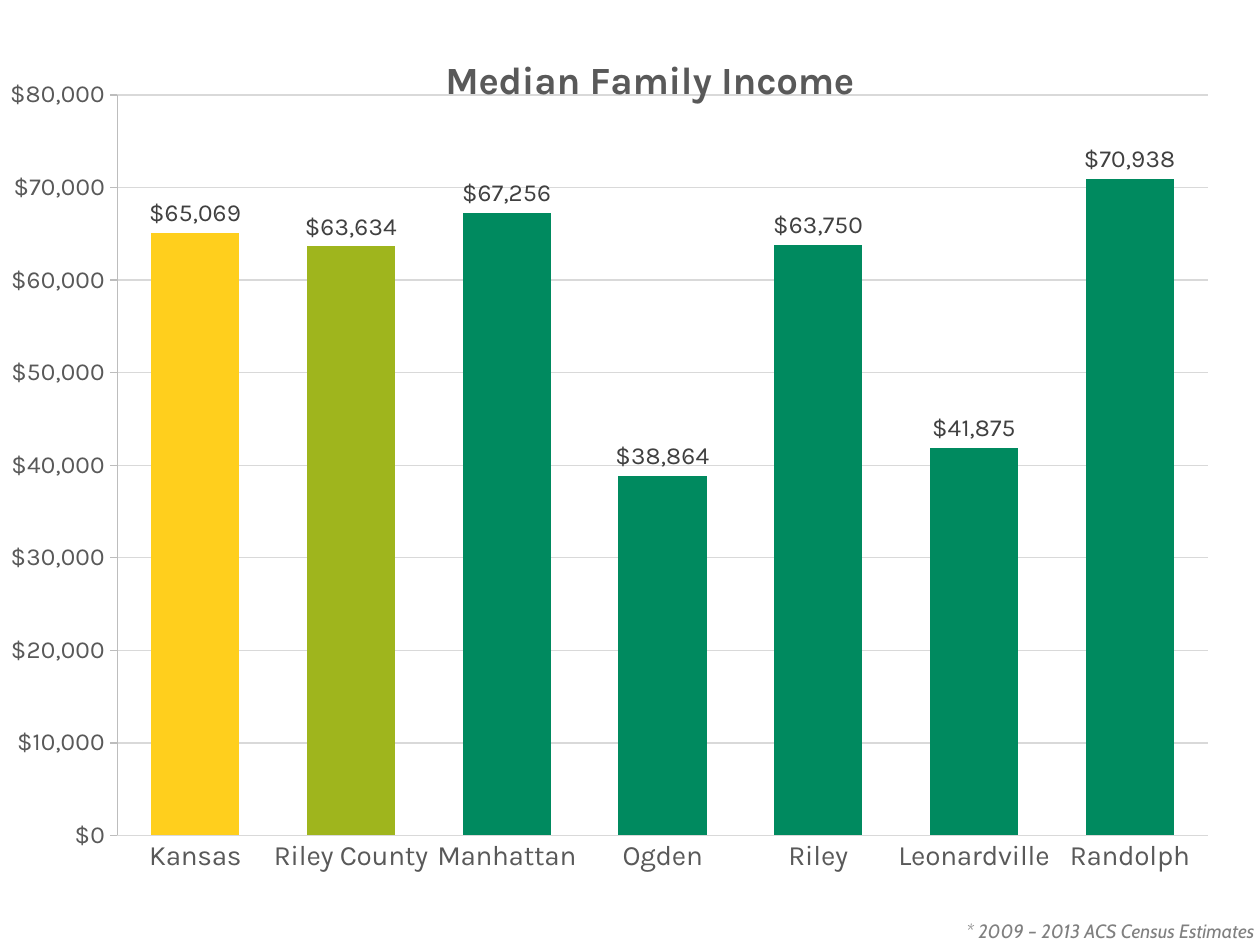
import pptx
import pptx.util
import pptx.dml.color
import pptx.chart.data
import pptx.enum.chart
import pptx.enum.text
import pptx.oxml
import pptx.oxml.ns

SCALE = 914400 / 126
MONEY = '"$"#,##0'
GREY = "595959"
RULE = "D9D9D9"
GREEN = "008A5F"
INCOME = {
    "Kansas": (65069, "FFCF1D"),
    "Riley County": (63634, "9FB51D"),
    "Manhattan": (67256, GREEN),
    "Ogden": (38864, GREEN),
    "Riley": (63750, GREEN),
    "Leonardville": (41875, GREEN),
    "Randolph": (70938, GREEN),
}


def px(n):
    return round(n * SCALE)


def tint(code):
    return pptx.dml.color.RGBColor.from_string(code)


def layout(x, y, w=None, h=None):
    inner = '<c:layoutTarget val="inner"/>' if w else ""
    parts = [("xMode", "edge"), ("yMode", "edge"), ("x", x), ("y", y)]
    if w:
        parts += [("w", w), ("h", h)]
    body = "".join(f'<c:{name} val="{val}"/>' for name, val in parts)
    return pptx.oxml.parse_xml(
        f'<c:layout {pptx.oxml.ns.nsdecls("c")}>'
        f"<c:manualLayout>{inner}{body}</c:manualLayout></c:layout>"
    )


class Deck:
    face = "Karla"

    def __init__(self, wide, high):
        self.show = pptx.Presentation()
        self.show.slide_width = px(wide)
        self.show.slide_height = px(high)
        self.slide = self.show.slides.add_slide(self.show.slide_layouts[6])

    def style(self, font, size, color, face=None, bold=False, slant=False):
        font.size = pptx.util.Pt(size)
        font.name = face or self.face
        font.bold = bold
        font.italic = slant
        font.color.rgb = tint(color)

    def line(self, part, color):
        part.line.color.rgb = tint(color)
        part.line.width = pptx.util.Pt(0.75)

    def note(self, text, *box):
        frame = self.slide.shapes.add_textbox(*map(px, box)).text_frame
        frame.word_wrap = False
        frame.margin_left = frame.margin_right = px(5)
        frame.margin_top = frame.margin_bottom = 0
        frame.vertical_anchor = pptx.enum.text.MSO_ANCHOR.MIDDLE
        frame.text = text
        para = frame.paragraphs[0]
        para.alignment = pptx.enum.text.PP_ALIGN.RIGHT
        self.style(para.runs[0].font, 11, "808080", "Cabin", slant=True)

    def title(self, chart, text):
        chart.has_title = True
        head = chart.chart_title
        head.text_frame.text = text
        self.style(head.text_frame.paragraphs[0].runs[0].font, 22, GREY, bold=True)
        head.include_in_layout = False
        tag = head._element
        for old in tag.findall(pptx.oxml.ns.qn("c:layout")):
            tag.remove(old)
        tag.find(pptx.oxml.ns.qn("c:tx")).addnext(layout(0.34, 0.04))

    def axes(self, chart):
        marks = pptx.enum.chart.XL_TICK_MARK
        cat, val = chart.category_axis, chart.value_axis
        for axis, size, color, mark in (
            (cat, 16, RULE, marks.NONE),
            (val, 14, "BDBDBD", marks.OUTSIDE),
        ):
            self.style(axis.tick_labels.font, size, GREY)
            self.line(axis.format, color)
            axis.major_tick_mark = mark
            axis.minor_tick_mark = marks.NONE
        val.minimum_scale, val.maximum_scale = 0, 80000
        val.major_unit = 10000
        val.tick_labels.number_format = MONEY
        val.tick_labels.number_format_is_linked = False
        self.line(val.major_gridlines.format, RULE)

    def bars(self, title, rows, *box):
        data = pptx.chart.data.CategoryChartData()
        data.categories = list(rows)
        data.add_series("Series 1", [val for val, color in rows.values()])
        kind = pptx.enum.chart.XL_CHART_TYPE.COLUMN_CLUSTERED
        chart = self.slide.shapes.add_chart(kind, *map(px, box), data).chart
        self.style(chart.font, 10, "000000", "Cabin")
        chart.has_legend = False
        self.title(chart, title)
        self.axes(chart)
        area = chart._chartSpace.chart.plotArea
        for old in area.findall(pptx.oxml.ns.qn("c:layout")):
            area.remove(old)
        area.insert(0, layout(0.082, 0.091, 0.876, 0.792))
        plot = chart.plots[0]
        plot.gap_width = 77
        plot.vary_by_categories = False
        group = plot.series[0]
        group.format.fill.solid()
        group.format.fill.fore_color.rgb = tint("066243")
        for i, (val, color) in enumerate(rows.values()):
            fill = group.points[i].format.fill
            fill.solid()
            fill.fore_color.rgb = tint(color)
        label = group.data_labels
        label.show_value = True
        label.number_format = MONEY
        label.number_format_is_linked = False
        label.position = pptx.enum.chart.XL_LABEL_POSITION.OUTSIDE_END
        self.style(label.font, 14, "404040")


def main():
    deck = Deck(1260, 945)
    deck.note("* 2009 – 2013 ACS Census Estimates", 955, 915, 305, 32)
    deck.bars("Median Family Income", INCOME, 10, 10, 1250, 935)
    deck.show.save("out.pptx")


if __name__ == "__main__":
    main()
